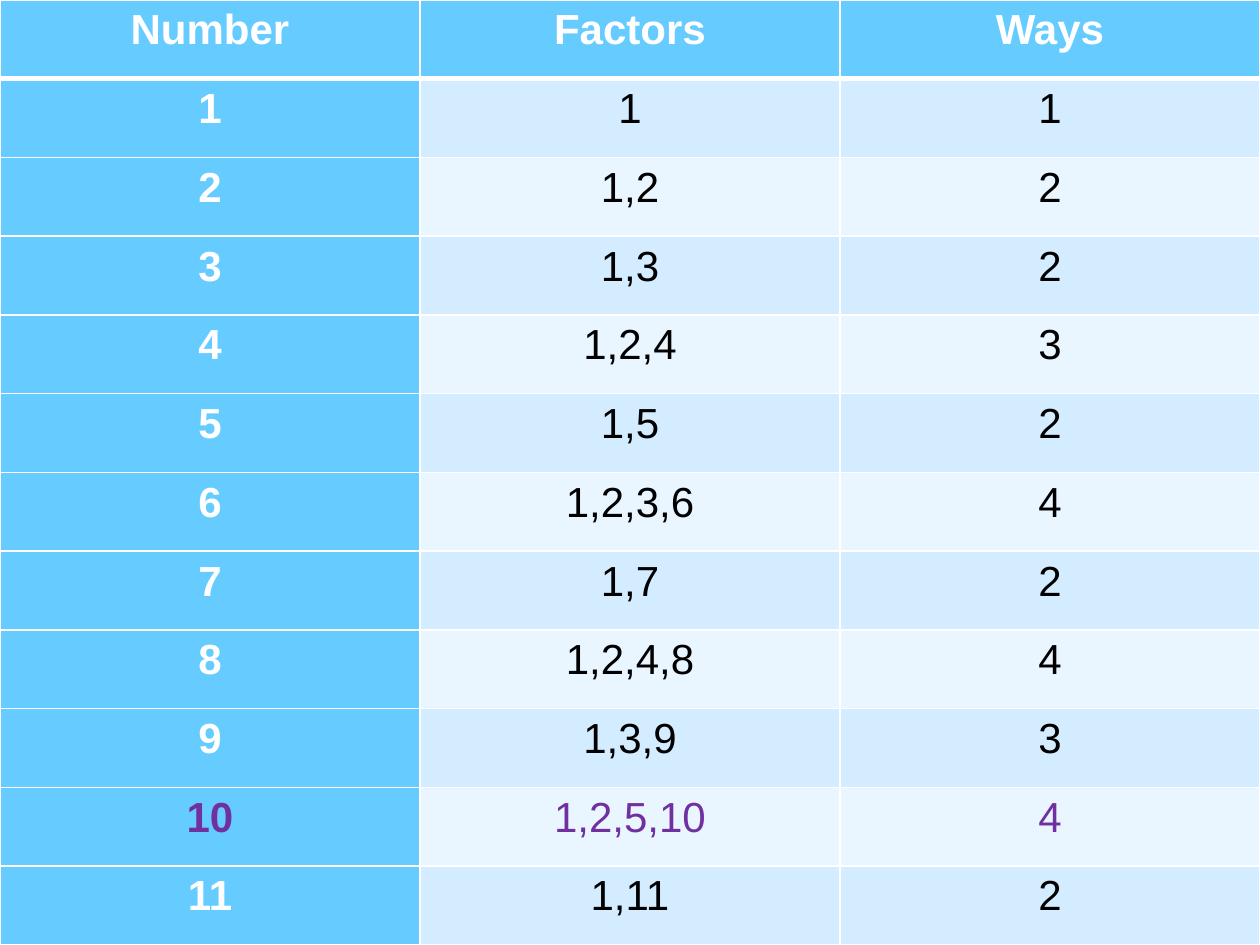
from dataclasses import dataclass

from lxml import etree
from pptx import Presentation
from pptx.dml.color import RGBColor
from pptx.enum.text import PP_ALIGN
from pptx.oxml.ns import qn
from pptx.table import _Cell
from pptx.util import Inches, Pt

CENTER = PP_ALIGN.CENTER


@dataclass(frozen=True)
class Theme:
    font: str = "Arial"
    size: int = 24
    line_spacing: float = 1.15
    accent: str = "66CCFF"
    odd_band: str = "D3ECFF"
    even_band: str = "EAF6FF"
    light_text: str = "FFFFFF"
    dark_text: str = "000000"
    highlight: str = "7030A0"
    border: str = "FFFFFF"
    thin: int = 1
    thick: int = 3


@dataclass(frozen=True)
class CellStyle:
    fill: str
    color: str
    bold: bool
    top: int
    bottom: int


THEME = Theme()
HEADINGS = ("Number", "Factors", "Ways")
LAST_NUMBER = 11
HIGHLIGHTED_NUMBER = 10


def factor_row(number: int) -> tuple[str, str, str]:
    """Give a number, its factors and how many there are."""
    factors = [str(n) for n in range(1, number + 1) if number % n == 0]
    return str(number), ",".join(factors), str(len(factors))


def cell_style(row: int, column: int) -> CellStyle:
    """Choose the look of a cell; row 0 is the header, other rows match their number."""
    emphasized = row == 0 or column == 0
    band = THEME.odd_band if row % 2 else THEME.even_band
    color = THEME.light_text if emphasized else THEME.dark_text
    if row == HIGHLIGHTED_NUMBER:
        color = THEME.highlight
    return CellStyle(
        fill=THEME.accent if emphasized else band,
        color=color,
        bold=emphasized,
        top=THEME.thick if row == 1 else THEME.thin,
        bottom=THEME.thick if row == 0 else THEME.thin,
    )


def add_border(cell: _Cell, side: str, width: int) -> None:
    properties = cell._tc.get_or_add_tcPr()
    line = etree.SubElement(properties, qn(f"a:ln{side}"), w=str(Pt(width)))
    fill = etree.SubElement(line, qn("a:solidFill"))
    etree.SubElement(fill, qn("a:srgbClr"), val=THEME.border)


def draw_cell(cell: _Cell, text: str, style: CellStyle) -> None:
    # Borders come before the fill in the cell properties
    widths = {"L": THEME.thin, "R": THEME.thin, "T": style.top, "B": style.bottom}
    for side, width in widths.items():
        add_border(cell, side, width)
    cell.fill.solid()
    cell.fill.fore_color.rgb = RGBColor.from_string(style.fill)

    # Text
    cell.margin_left = cell.margin_right = Inches(0.07)
    cell.margin_top = cell.margin_bottom = 0
    cell.text = text
    para = cell.text_frame.paragraphs[0]
    para.alignment = CENTER
    para.line_spacing = THEME.line_spacing
    para.font.name = THEME.font
    para.font.size = Pt(THEME.size)
    para.font.bold = style.bold
    para.font.color.rgb = RGBColor.from_string(style.color)


def main() -> None:
    deck = Presentation()
    deck.slide_width, deck.slide_height = Inches(10), Inches(7.5)
    page = deck.slides.add_slide(deck.slide_layouts[6])

    # Factor table over the whole page
    rows = [HEADINGS, *(factor_row(n) for n in range(1, LAST_NUMBER + 1))]
    table = page.shapes.add_table(
        len(rows), len(HEADINGS), 0, 0, deck.slide_width, deck.slide_height
    ).table
    table.first_col = True
    for row, texts in enumerate(rows):
        for column, text in enumerate(texts):
            draw_cell(table.cell(row, column), text, cell_style(row, column))

    deck.save("out.pptx")


if __name__ == "__main__":
    main()
